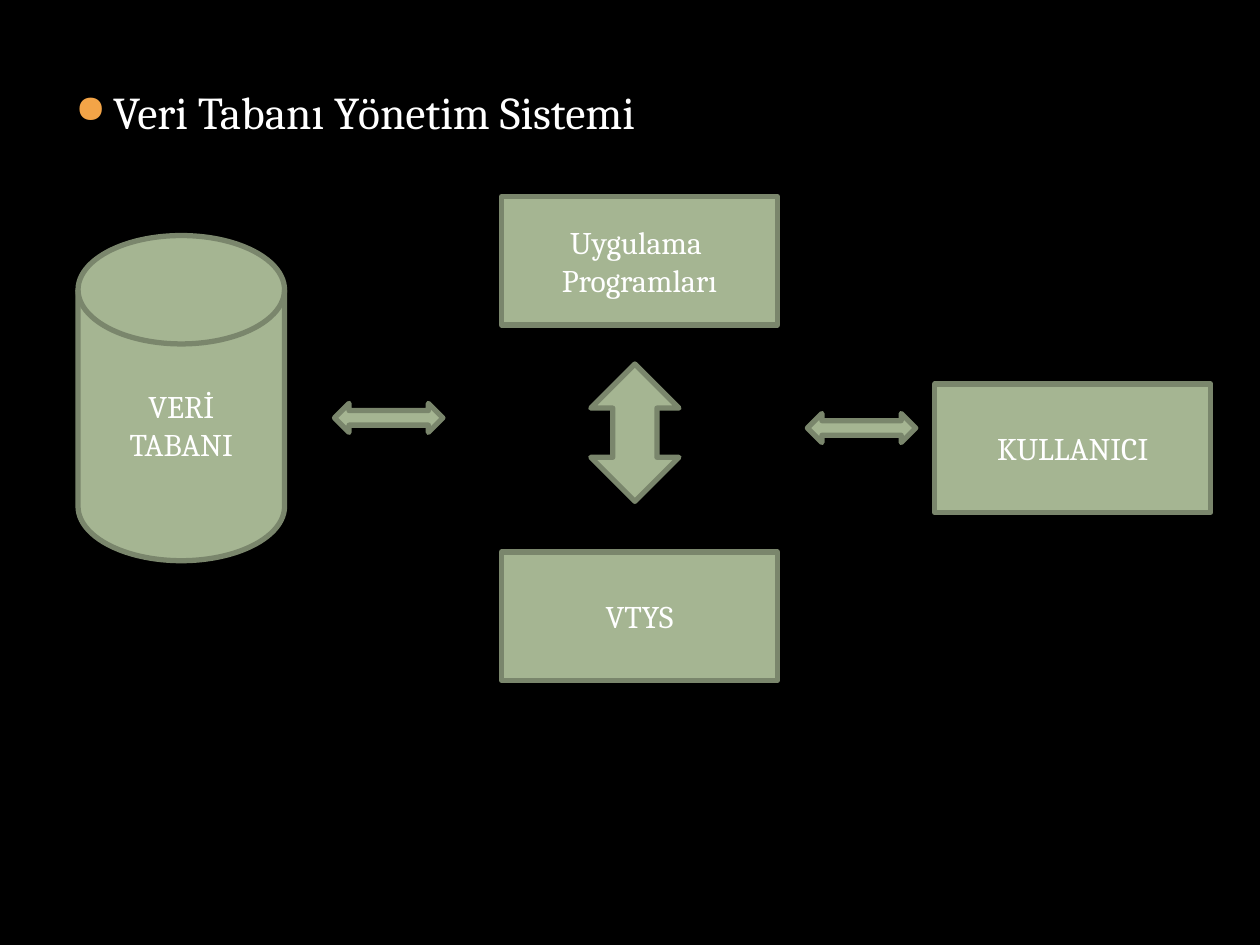
from lxml.etree import SubElement
from pptx import Presentation
from pptx.dml.color import RGBColor
from pptx.enum.shapes import MSO_SHAPE
from pptx.enum.text import MSO_ANCHOR, PP_ALIGN
from pptx.oxml.ns import qn
from pptx.util import Pt

FONT = "Cambria"
BLACK, WHITE, ORANGE = "000000", "FFFFFF", "F3A447"
SAGE, DARK_SAGE = "A5B592", "7A866C"

HEADING = "Veri Tabanı Yönetim Sistemi"
BOX_SIZE = (157.7, 73.4)
SIDE_ARROW_SIZE = (61.9, 16.6)
MIDDLE_LEFT = 286.6

PARTS = [
    (MSO_SHAPE.FLOWCHART_MAGNETIC_DISK, (44.6, 134.6), (118, 185.8), ["VERİ", "TABANI"]),
    (MSO_SHAPE.RECTANGLE, (MIDDLE_LEFT, 112.3), BOX_SIZE, ["Uygulama ", "Programları"]),
    (MSO_SHAPE.RECTANGLE, (MIDDLE_LEFT, 315.4), BOX_SIZE, ["VTYS"]),
    (MSO_SHAPE.RECTANGLE, (534.2, 219.4), BOX_SIZE, ["KULLANICI"]),
    (MSO_SHAPE.UP_DOWN_ARROW, (337.6, 208), (50.4, 78.5), []),
    (MSO_SHAPE.LEFT_RIGHT_ARROW, (191.2, 230.5), SIDE_ARROW_SIZE, []),
    (MSO_SHAPE.LEFT_RIGHT_ARROW, (461.4, 236.3), SIDE_ARROW_SIZE, []),
]


def color(hex_value):
    return RGBColor.from_string(hex_value)


def add_run(paragraph, words, size):
    run = paragraph.add_run()
    run.text = words
    run.font.name = FONT
    run.font.size = Pt(size)
    run.font.color.rgb = color(WHITE)


def add_bullet(paragraph, indent):
    properties = paragraph._p.get_or_add_pPr()
    properties.set("marL", str(Pt(indent)))
    properties.set("indent", str(-Pt(indent)))
    bullet_color = SubElement(properties, qn("a:buClr"))
    SubElement(bullet_color, qn("a:srgbClr"), val=ORANGE)
    SubElement(properties, qn("a:buSzPct"), val="85000")
    SubElement(properties, qn("a:buChar"), char="●")


def add_heading(slide):
    heading = slide.shapes.add_textbox(Pt(36), Pt(44.6), Pt(648), Pt(438.5))
    heading.text_frame.word_wrap = True
    paragraph = heading.text_frame.paragraphs[0]
    paragraph.space_before = Pt(6)
    add_bullet(paragraph, 21.6)
    add_run(paragraph, HEADING, 26)


def add_part(slide, preset, corner, size, lines):
    part = slide.shapes.add_shape(preset, *map(Pt, corner + size))
    part.shadow.inherit = False
    part.fill.solid()
    part.fill.fore_color.rgb = color(SAGE)
    part.line.color.rgb = color(DARK_SAGE)
    part.line.width = Pt(3)
    frame = part.text_frame
    frame.word_wrap = True
    frame.vertical_anchor = MSO_ANCHOR.MIDDLE
    for index, words in enumerate(lines):
        paragraph = frame.add_paragraph() if index else frame.paragraphs[0]
        paragraph.alignment = PP_ALIGN.CENTER
        add_run(paragraph, words, 18)


def main():
    deck = Presentation()
    deck.slide_width, deck.slide_height = Pt(720), Pt(540)
    slide = deck.slides.add_slide(deck.slide_layouts[6])
    slide.background.fill.solid()
    slide.background.fill.fore_color.rgb = color(BLACK)
    add_heading(slide)
    for part in PARTS:
        add_part(slide, *part)
    deck.save("out.pptx")


if __name__ == "__main__":
    main()
